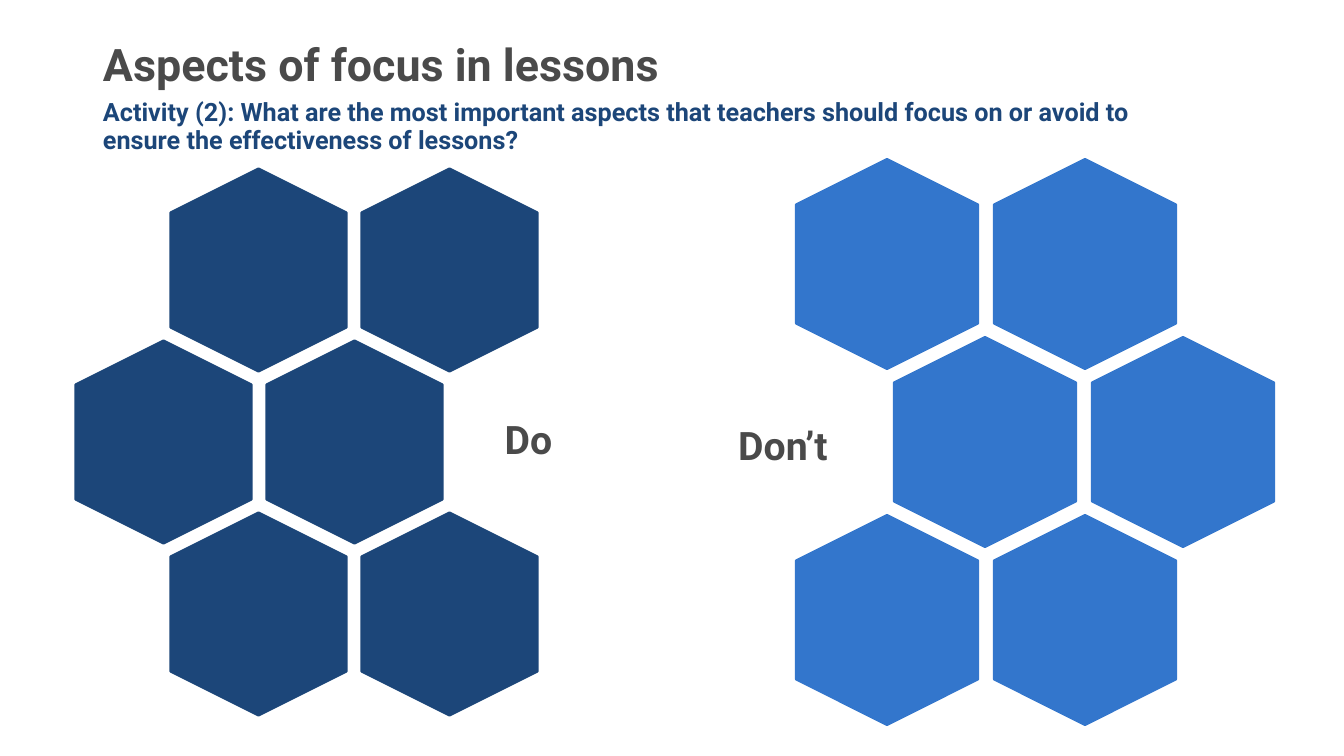
from pptx import Presentation
from pptx.dml.color import RGBColor
from pptx.enum.shapes import MSO_SHAPE
from pptx.enum.text import MSO_ANCHOR, PP_ALIGN
from pptx.util import Emu, Pt

HEXAGON = MSO_SHAPE.HEXAGON
TOP, MIDDLE = MSO_ANCHOR.TOP, MSO_ANCHOR.MIDDLE
LEFT, CENTER = PP_ALIGN.LEFT, PP_ALIGN.CENTER

PAGE_WIDTH, PAGE_HEIGHT = 1344, 756
EMU_PER_PX = 12192000 / PAGE_WIDTH
GREY, NAVY, BLUE = "4A4A4A", "1C4679", "3376CC"


def px(length):
    return Emu(round(length * EMU_PER_PX))


def color(value):
    return RGBColor.from_string(value)


class LessonPage:
    font_name = "Roboto"

    def __init__(self, deck):
        self.page = deck.slides.add_slide(deck.slide_layouts[6])

    def text(self, words, place, size, ink, align=LEFT, anchor=MIDDLE, inset=(10, 5)):
        """Add a bold text box; inset is (horizontal, vertical) in px."""
        box = self.page.shapes.add_textbox(*map(px, place))
        across, down = map(px, inset)
        frame_format = {
            "word_wrap": True, "vertical_anchor": anchor,
            "margin_left": across, "margin_right": across,
            "margin_top": down, "margin_bottom": down,
        }
        for name, value in frame_format.items():
            setattr(box.text_frame, name, value)
        para = box.text_frame.paragraphs[0]
        para.alignment = align
        para.line_spacing = 0.9
        span = para.add_run()
        span.text = words
        font_format = {"name": self.font_name, "size": Pt(size), "bold": True}
        for name, value in font_format.items():
            setattr(span.font, name, value)
        span.font.color.rgb = color(ink)

    def hexagon(self, left, top, width, height, fill):
        """Add a hexagon standing on its point; the frame is given unrotated."""
        cell = self.page.shapes.add_shape(HEXAGON, *map(px, (left, top, width, height)))
        cell.rotation = 90
        cell.adjustments[0] = 0.25
        cell.shadow.inherit = False
        cell.fill.solid()
        cell.fill.fore_color.rgb = color(fill)
        cell.line.color.rgb = color(fill)
        cell.line.width = Pt(1.5)

    def honeycomb(self, left, top, size, pitch, shift, fill):
        """Add three rows of two hexagons, the middle row shifted sideways."""
        for row in range(3):
            for column in range(2):
                x = left + column * pitch[0] + (shift if row == 1 else 0)
                self.hexagon(x, top + row * pitch[1], *size, fill)


def main():
    deck = Presentation()
    deck.slide_width, deck.slide_height = px(PAGE_WIDTH), px(PAGE_HEIGHT)
    lesson = LessonPage(deck)

    lesson.text("Aspects of focus in lessons", (93, 26, 1124, 82), 32, GREY)
    lesson.honeycomb(782, 173, (210, 182), (198, 178), 98, BLUE)
    lesson.honeycomb(157, 182, (203, 176), (191, 172), -95, NAVY)

    labels = {"Don’t": (686, 385, 194, 126), "Do": (415, 381, 227, 122)}
    for words, place in labels.items():
        lesson.text(words, place, 28, GREY, CENTER, inset=(12, 12))

    lesson.text(
        "Activity (2): What are the most important aspects that teachers should "
        "focus on or avoid to ensure the effectiveness of lessons?",
        (93, 95, 1116, 69), 18, NAVY, anchor=TOP)
    deck.save("out.pptx")


if __name__ == "__main__":
    main()
